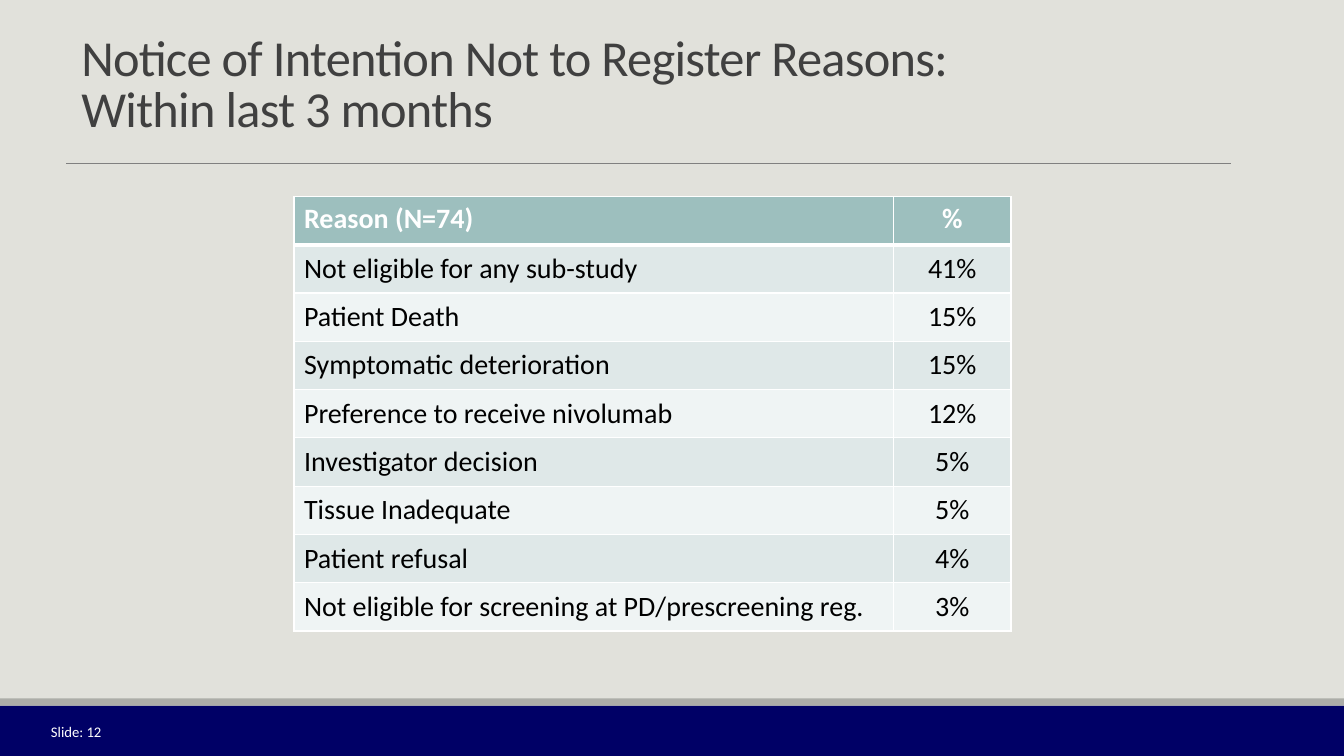
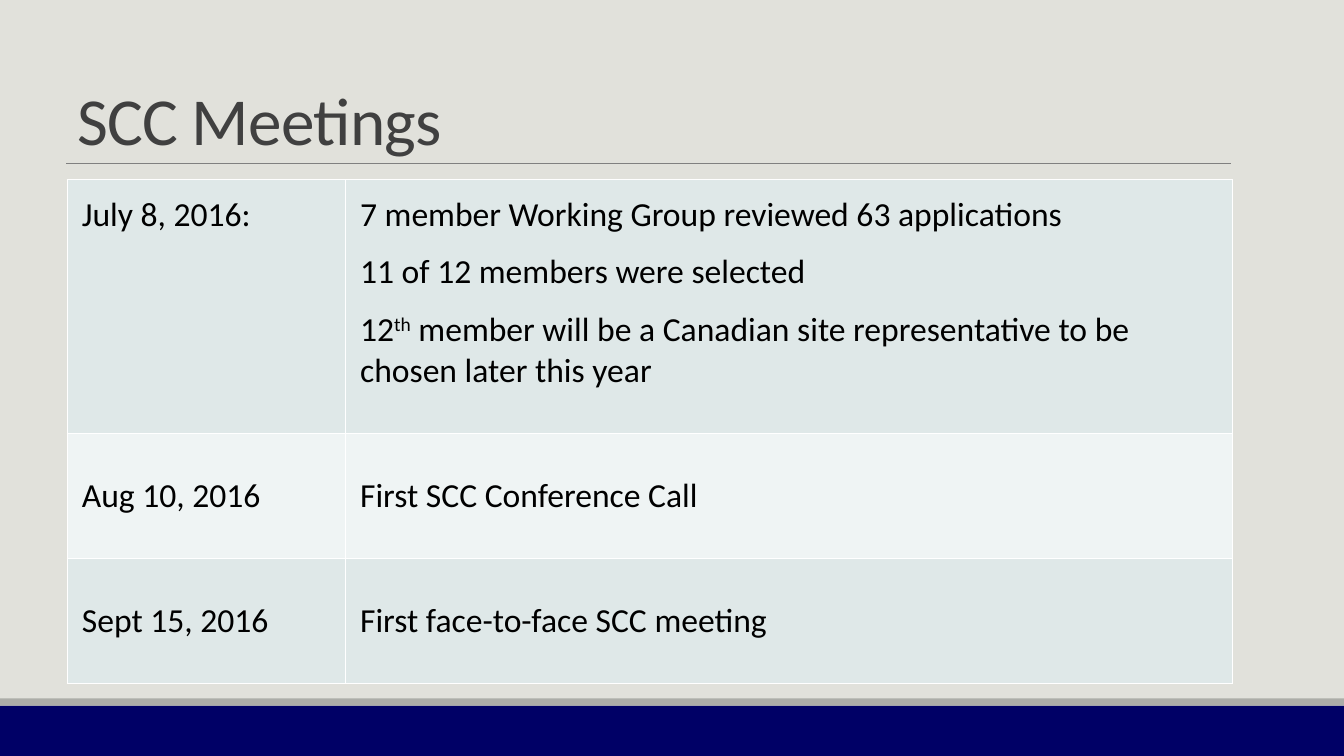
from lxml import etree
from pptx import Presentation
from pptx.dml.color import RGBColor
from pptx.enum.shapes import MSO_CONNECTOR, MSO_SHAPE
from pptx.enum.text import MSO_ANCHOR, PP_ALIGN
from pptx.oxml.ns import qn
from pptx.util import Emu, Pt

LEFT, CENTER, RIGHT = PP_ALIGN.LEFT, PP_ALIGN.CENTER, PP_ALIGN.RIGHT
TOP, MIDDLE, BOTTOM = MSO_ANCHOR.TOP, MSO_ANCHOR.MIDDLE, MSO_ANCHOR.BOTTOM
RECTANGLE, STRAIGHT = MSO_SHAPE.RECTANGLE, MSO_CONNECTOR.STRAIGHT

EMU_PER_PX = 9525
WIDTH, HEIGHT = 1280, 720
FONT = "Calibri"
BACKGROUND, NAVY, GRAY, RULE = "E1E1DB", "000066", "ACADA8", "808080"
TITLE_COLOR, WHITE, BLACK = "404040", "FFFFFF", "000000"
HEADER_FILL, BAND_FILLS = "9DBFBE", ("DFE8E8", "EFF4F4")

BANDS = [(672, 48, NAVY), (665, 7, GRAY)]
RULE_LEFT, RULE_RIGHT, RULE_TOP = 63, 1172, 156

REASON_TITLE = "Notice of Intention Not to Register Reasons:\nWithin last 3 months"
REASON_HEADER = ("Reason (N=74)", "%")
REASONS = [
    ("Not eligible for any sub-study", "41%"),
    ("Patient Death", "15%"),
    ("Symptomatic deterioration", "15%"),
    ("Preference to receive nivolumab", "12%"),
    ("Investigator decision", "5%"),
    ("Tissue Inadequate", "5%"),
    ("Patient refusal", "4%"),
    ("Not eligible for screening at PD/prescreening reg.", "3%"),
]
SLIDE_NUMBER = "Slide: 12"

MEETING_TITLE = "SCC Meetings"
MEETINGS = [
    ("July 8, 2016:", [
        "7 member Working Group reviewed 63 applications",
        "11 of 12 members were selected",
        "12^th^ member will be a Canadian site representative to be chosen later this year",
    ]),
    ("Aug 10, 2016", "First SCC Conference Call"),
    ("Sept 15, 2016", "First face-to-face SCC meeting"),
]


def px(value):
    return Emu(value * EMU_PER_PX)


def color(value):
    return RGBColor.from_string(value)


def write_text(frame, text, size, text_color=BLACK, bold=False, align=LEFT,
               line_spacing=None, gap=0, tracking=None):
    frame.word_wrap = True
    paragraphs = [text] if isinstance(text, str) else text
    for index, content in enumerate(paragraphs):
        paragraph = frame.add_paragraph() if index else frame.paragraphs[0]
        paragraph.alignment = align
        if line_spacing:
            paragraph.line_spacing = line_spacing
        if index:
            paragraph.space_before = Pt(gap)
        for line_index, line in enumerate(content.split("\n")):
            if line_index:
                paragraph.add_line_break()
            for part_index, part in enumerate(line.split("^")):
                run = paragraph.add_run()
                run.text = part
                run.font.name = FONT
                run.font.size = Pt(size)
                run.font.bold = bold
                run.font.color.rgb = color(text_color)
                properties = run.font._element
                if part_index % 2:
                    properties.set("baseline", "30000")
                if tracking:
                    properties.set("spc", str(int(tracking * 100)))


def add_text(slide, box, text, anchor, **text_format):
    shape = slide.shapes.add_textbox(*map(px, box))
    shape.text_frame.vertical_anchor = anchor
    write_text(shape.text_frame, text, **text_format)


def add_base_slide(presentation, title, title_box, title_size):
    slide = presentation.slides.add_slide(presentation.slide_layouts[6])
    slide.background.fill.solid()
    slide.background.fill.fore_color.rgb = color(BACKGROUND)
    for top, height, fill in BANDS:
        band = slide.shapes.add_shape(RECTANGLE, 0, px(top), px(WIDTH), px(height))
        band.shadow.inherit = False
        band.fill.solid()
        band.fill.fore_color.rgb = color(fill)
        band.line.fill.background()
    rule = slide.shapes.add_connector(
        STRAIGHT, px(RULE_LEFT), px(RULE_TOP), px(RULE_RIGHT), px(RULE_TOP))
    rule.line.color.rgb = color(RULE)
    rule.line.width = Pt(0.5)
    etree.SubElement(rule._element.spPr, qn("a:effectLst"))
    add_text(slide, title_box, title, BOTTOM, size=title_size,
             text_color=TITLE_COLOR, line_spacing=0.85, tracking=-0.5)
    return slide


def add_grid(slide, left, top, column_widths, row_heights):
    frame = slide.shapes.add_table(
        len(row_heights), len(column_widths), px(left), px(top),
        px(sum(column_widths)), px(sum(row_heights)))
    table = frame.table
    table.first_row = table.horz_banding = False
    for column, width in zip(table.columns, column_widths):
        column.width = px(width)
    for row, height in zip(table.rows, row_heights):
        row.height = px(height)
    return table


def style_cell(cell, fill, anchor, margin=None, top_border=1, bottom_border=1):
    cell.vertical_anchor = anchor
    if margin is not None:
        cell.margin_left = cell.margin_right = px(margin)
        cell.margin_top = cell.margin_bottom = px(margin)
    properties = cell._tc.get_or_add_tcPr()
    borders = (("lnL", 1), ("lnR", 1), ("lnT", top_border), ("lnB", bottom_border))
    for tag, width in borders:
        border = etree.SubElement(properties, qn(f"a:{tag}"), w=str(Pt(width)))
        border_fill = etree.SubElement(border, qn("a:solidFill"))
        etree.SubElement(border_fill, qn("a:srgbClr"), val=WHITE)
    cell.fill.solid()
    cell.fill.fore_color.rgb = color(fill)


def build_reasons(presentation):
    slide = add_base_slide(presentation, REASON_TITLE, (68, 46, 1107, 90), 36)
    rows = [REASON_HEADER] + REASONS
    table = add_grid(slide, 280, 187, (571, 112), [46] * len(rows))
    for row_index, row in enumerate(rows):
        header = row_index == 0
        fill = HEADER_FILL if header else BAND_FILLS[(row_index - 1) % 2]
        for column_index, text in enumerate(row):
            cell = table.cell(row_index, column_index)
            style_cell(cell, fill, TOP if header else MIDDLE,
                       margin=1 if column_index and not header else None,
                       top_border=3 if row_index == 1 else 1,
                       bottom_border=3 if header else 1)
            write_text(cell.text_frame, text, size=20, bold=header,
                       text_color=WHITE if header else BLACK,
                       align=CENTER if column_index else LEFT)
    add_text(slide, (7, 678, 99, 38), SLIDE_NUMBER, MIDDLE, size=10.5,
             text_color=WHITE, align=RIGHT)


def build_meetings(presentation):
    slide = add_base_slide(presentation, MEETING_TITLE, (64, 36, 1085, 120), 48)
    table = add_grid(slide, 64, 171, (265, 845), (242, 119, 119))
    for row_index, row in enumerate(MEETINGS):
        for column_index, text in enumerate(row):
            cell = table.cell(row_index, column_index)
            style_cell(cell, BAND_FILLS[row_index % 2],
                       MIDDLE if row_index else TOP, margin=14)
            write_text(cell.text_frame, text, size=24, gap=12)


def main():
    presentation = Presentation()
    presentation.slide_width, presentation.slide_height = px(WIDTH), px(HEIGHT)
    build_reasons(presentation)
    build_meetings(presentation)
    presentation.save("out.pptx")


if __name__ == "__main__":
    main()
